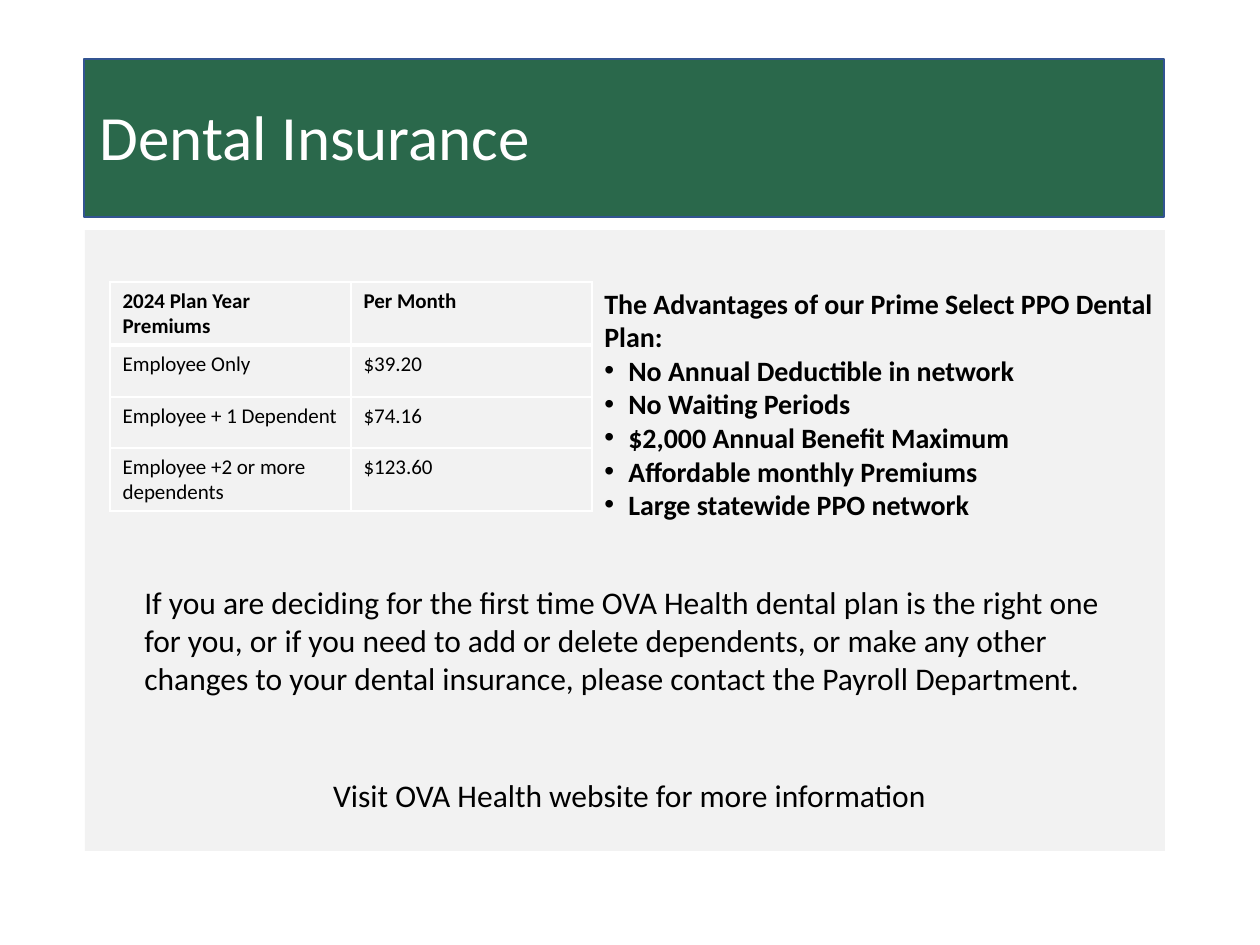
from lxml import etree
from pptx import Presentation
from pptx.dml.color import RGBColor
from pptx.enum.shapes import MSO_SHAPE
from pptx.enum.text import MSO_ANCHOR, MSO_AUTO_SIZE, PP_ALIGN
from pptx.oxml.ns import qn
from pptx.util import Emu, Pt

RECTANGLE = MSO_SHAPE.RECTANGLE
MIDDLE = MSO_ANCHOR.MIDDLE
NO_FIT = MSO_AUTO_SIZE.NONE
LEFT, CENTER = PP_ALIGN.LEFT, PP_ALIGN.CENTER

FONT = "Calibri"
GREEN = RGBColor(0x2A, 0x68, 0x4B)
BLUE = RGBColor(0x32, 0x54, 0x91)
GREY = RGBColor(0xF2, 0xF2, 0xF2)
WHITE = RGBColor(0xFF, 0xFF, 0xFF)
BLACK = RGBColor(0x00, 0x00, 0x00)

TITLE_ONLY = 5
PX_PER_INCH = 126
BULLET_INDENT = 24
COLUMN_WIDTH = 241
ROW_HEIGHTS = (63, 52, 51, 63)

PREMIUMS = (
    ("2024 Plan Year Premiums", "Per Month"),
    ("Employee Only", "$39.20"),
    ("Employee + 1 Dependent", "$74.16"),
    ("Employee +2 or more dependents", "$123.60"),
)
ADVANTAGES_HEADING = "The Advantages of our Prime Select PPO Dental Plan:"
ADVANTAGES = (
    "No Annual Deductible in network",
    "No Waiting Periods",
    "$2,000 Annual Benefit Maximum",
    "Affordable monthly Premiums",
    "Large statewide PPO network",
)
CONTACT = (
    "If you are deciding for the first time OVA Health dental plan is the right "
    "one for you, or if you need to add or delete dependents, or make any other "
    "changes to your dental insurance, please contact the Payroll Department."
)
WEBSITE = "Visit OVA Health website for more information"


def px(length):
    """Turn a length in px into EMU."""
    return Emu(round(length * 914400 / PX_PER_INCH))


def style(para, size, color=BLACK, bold=False, align=LEFT):
    """Set the font and alignment of a paragraph."""
    para.alignment = align
    para.font.name = FONT
    para.font.size = Pt(size)
    para.font.bold = bold
    para.font.color.rgb = color


def add_bullet(para):
    """Give a paragraph a hanging round bullet."""
    properties = para._p.get_or_add_pPr()
    properties.set("marL", str(px(BULLET_INDENT)))
    properties.set("indent", str(-px(BULLET_INDENT)))
    etree.SubElement(properties, qn("a:buFont"), typeface="Arial")
    etree.SubElement(properties, qn("a:buChar"), char="•")


def add_panel(page, bounds, fill, line=None):
    """Add a filled rectangle, outlined when a line colour is given."""
    panel = page.shapes.add_shape(RECTANGLE, *map(px, bounds))
    panel.shadow.inherit = False
    panel.fill.solid()
    panel.fill.fore_color.rgb = fill
    if line is None:
        panel.line.fill.background()
    else:
        panel.line.color.rgb = line
        panel.line.width = Pt(1)


def set_title(page, text, bounds):
    """Fill the title placeholder and bring it in front of its banner."""
    title = page.shapes.title
    title.left, title.top, title.width, title.height = map(px, bounds)
    frame = title.text_frame
    frame.text = text
    frame.auto_size = NO_FIT
    frame.vertical_anchor = MIDDLE
    para = frame.paragraphs[0]
    para.line_spacing = 0.9
    style(para, 36, WHITE)
    page.shapes._spTree.append(title._element)


def add_text(page, bounds, text, size, bold=False, align=LEFT, bullets=()):
    """Add a wrapped text box with an optional bulleted list below its text."""
    box = page.shapes.add_textbox(*map(px, bounds))
    frame = box.text_frame
    frame.word_wrap = True
    frame.text = text
    style(frame.paragraphs[0], size, bold=bold, align=align)
    for bullet in bullets:
        para = frame.add_paragraph()
        para.text = bullet
        add_bullet(para)
        style(para, size, bold=bold, align=align)


def set_borders(cell, bottom_width):
    """Draw white borders around a cell, with its own width at the bottom."""
    properties = cell._tc.get_or_add_tcPr()
    sides = (("a:lnL", 1), ("a:lnR", 1), ("a:lnT", 1), ("a:lnB", bottom_width))
    for position, (side, width) in enumerate(sides):
        line = etree.Element(qn(side), w=str(Pt(width)))
        fill = etree.SubElement(line, qn("a:solidFill"))
        etree.SubElement(fill, qn("a:srgbClr"), val=str(WHITE))
        properties.insert(position, line)


def add_premium_table(page, left, top):
    """Add the premium table with a bold header row."""
    columns = len(PREMIUMS[0])
    bounds = (left, top, columns * COLUMN_WIDTH, sum(ROW_HEIGHTS))
    frame = page.shapes.add_table(len(PREMIUMS), columns, *map(px, bounds))
    table = frame.table
    for column in table.columns:
        column.width = px(COLUMN_WIDTH)
    for row_index, texts in enumerate(PREMIUMS):
        header = row_index == 0
        table.rows[row_index].height = px(ROW_HEIGHTS[row_index])
        for column_index, text in enumerate(texts):
            cell = table.cell(row_index, column_index)
            cell.text = text
            cell.fill.background()
            style(cell.text_frame.paragraphs[0], 12, bold=header)
            set_borders(cell, 3 if header else 1)
            if row_index == 1:
                top_line = cell._tc.tcPr.find(qn("a:lnT"))
                top_line.set("w", str(Pt(3)))


def main():
    """Build the dental insurance slide."""
    deck = Presentation()
    deck.slide_width, deck.slide_height = px(1260), px(945)
    page = deck.slides.add_slide(deck.slide_layouts[TITLE_ONLY])
    add_panel(page, (84, 59, 1080, 158), GREEN, BLUE)
    set_title(page, "Dental Insurance", (87, 63, 1068, 154))
    add_panel(page, (85, 230, 1080, 621), GREY)
    add_text(page, (592, 280, 595, 251), ADVANTAGES_HEADING, 16, bold=True,
             bullets=ADVANTAGES)
    add_text(page, (132, 577, 1023, 127), CONTACT, 18)
    add_text(page, (297, 770, 665, 50), WEBSITE, 18, align=CENTER)
    add_premium_table(page, 110, 282)
    deck.save("out.pptx")


if __name__ == "__main__":
    main()
